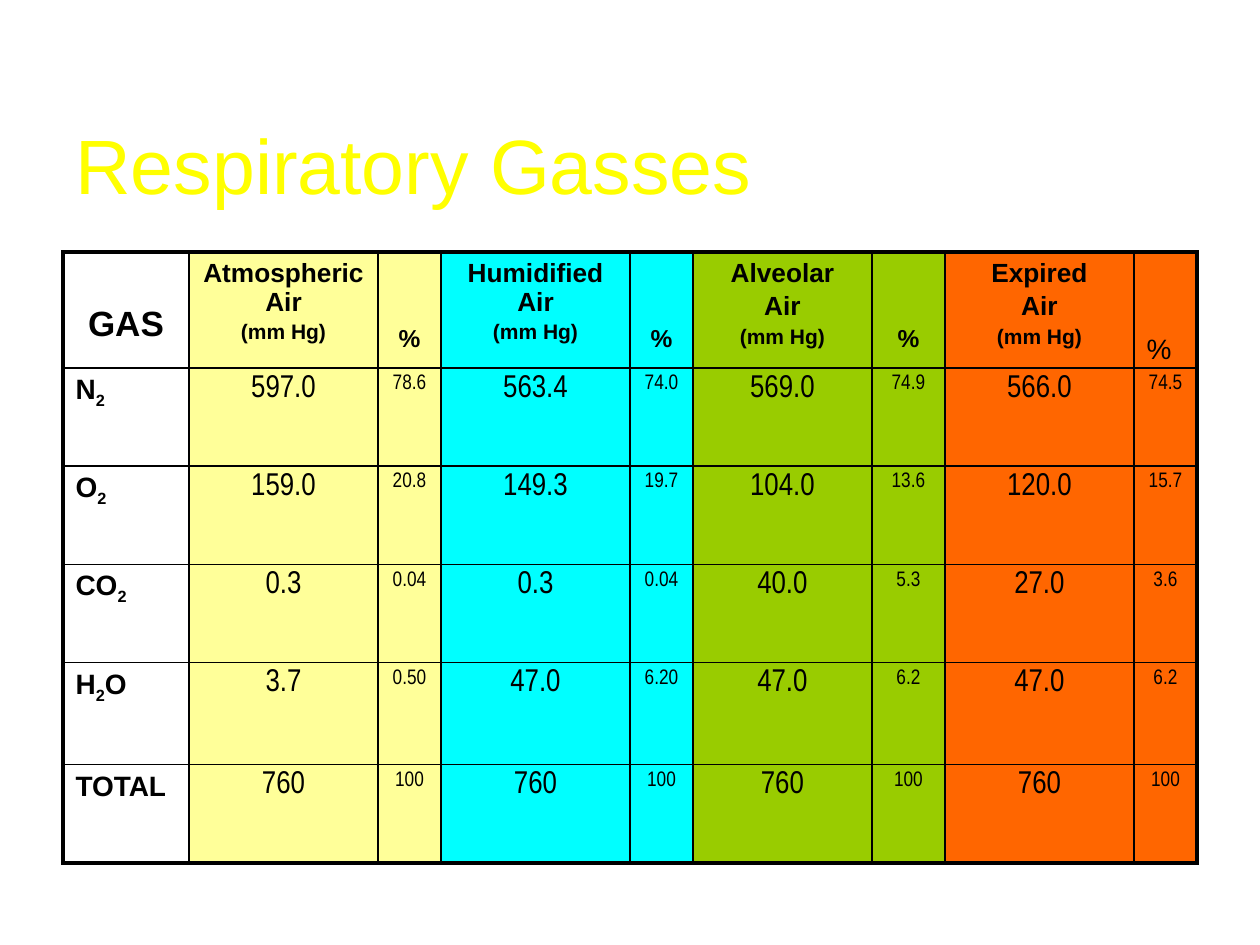
"""Build a slide with a table of respiratory gas pressures and percentages."""
from lxml import etree
from pptx import Presentation
from pptx.dml.color import RGBColor
from pptx.enum.text import MSO_ANCHOR, PP_ALIGN
from pptx.oxml import parse_xml
from pptx.oxml.ns import qn
from pptx.util import Inches, Pt

CENTER, LEFT, MIDDLE = PP_ALIGN.CENTER, PP_ALIGN.LEFT, MSO_ANCHOR.MIDDLE
BLACK = RGBColor(0x00, 0x00, 0x00)
WHITE = RGBColor(0xFF, 0xFF, 0xFF)
YELLOW = RGBColor(0xFF, 0xFF, 0x00)
CREAM = RGBColor(0xFF, 0xFF, 0x99)
CYAN = RGBColor(0x00, 0xFF, 0xFF)
GREEN = RGBColor(0x99, 0xCC, 0x00)
ORANGE = RGBColor(0xFF, 0x66, 0x00)
A_NS = "http://schemas.openxmlformats.org/drawingml/2006/main"

COL_WIDTHS = [1, 1.5, 0.5, 1.5, 0.5, 1.42, 0.58, 1.5, 0.5]
ROW_HEIGHTS = [0.92, 0.78, 0.78, 0.78, 0.81, 0.78]
COL_FILLS = [WHITE, CREAM, CREAM, CYAN, CYAN, GREEN, GREEN, ORANGE, ORANGE]
HEADERS = [
    ["GAS"],
    ["Atmospheric Air", "(mm Hg)"], ["%"],
    ["Humidified Air", "(mm Hg)"], ["%"],
    ["Alveolar", "Air", "(mm Hg)"], ["%"],
    ["Expired", "Air", "(mm Hg)"], ["%"],
]
GASES = [
    ["N2", "597.0", "78.6", "563.4", "74.0", "569.0", "74.9", "566.0", "74.5"],
    ["O2", "159.0", "20.8", "149.3", "19.7", "104.0", "13.6", "120.0", "15.7"],
    ["CO2", "0.3", "0.04", "0.3", "0.04", "40.0", "5.3", "27.0", "3.6"],
    ["H2O", "3.7", "0.50", "47.0", "6.20", "47.0", "6.2", "47.0", "6.2"],
    ["TOTAL", "760", "100", "760", "100", "760", "100", "760", "100"],
]
HEADER_SIZES = {"GAS": 20, "(mm Hg)": 12, "%": 14}
HEADER_TOPS = {"GAS": 0.42, "%": 0.58}


def style(p, size, name="Arial", bold=False, align=CENTER):
    p.alignment = align
    p.font.size = Pt(size)
    p.font.name = name
    p.font.bold = bold
    p.font.color.rgb = BLACK


def add_borders(cell, widths):
    tc_pr = cell._tc.get_or_add_tcPr()
    for i, (side, width) in enumerate(zip("LRTB", widths)):
        ln = parse_xml(
            f'<a:ln{side} xmlns:a="{A_NS}" w="{Pt(width)}"><a:solidFill>'
            f'<a:srgbClr val="{BLACK}"/></a:solidFill></a:ln{side}>')
        tc_pr.insert(i, ln)


prs = Presentation()
prs.slide_width, prs.slide_height = Inches(10), Inches(7.5)
s = prs.slides.add_slide(prs.slide_layouts[6])

title = s.shapes.add_textbox(Inches(0.5), Inches(0.67), Inches(9), Inches(1.25))
tf = title.text_frame
tf.word_wrap = True
tf.vertical_anchor = MIDDLE
r = tf.paragraphs[0].add_run()
r.text = "Respiratory Gasses"
r.font.size = Pt(44)
r.font.color.rgb = YELLOW
effects = etree.SubElement(r._r.get_or_add_rPr(), qn("a:effectLst"))
shadow = etree.SubElement(effects, qn("a:outerShdw"), dist=str(Inches(0.04)), dir="2700000")
etree.SubElement(shadow, qn("a:srgbClr"), val=str(BLACK))
r.font.name = "Arial"

rows, cols = len(ROW_HEIGHTS), len(COL_WIDTHS)
table = s.shapes.add_table(rows, cols, Inches(0.5), Inches(2), Inches(9),
                           Inches(sum(ROW_HEIGHTS))).table
table.first_row = table.horz_banding = False
for column, width in zip(table.columns, COL_WIDTHS):
    column.width = Inches(width)
for row, height in zip(table.rows, ROW_HEIGHTS):
    row.height = Inches(height)

for i in range(rows):
    for j, fill in enumerate(COL_FILLS):
        cell = table.cell(i, j)
        cell.fill.solid()
        cell.fill.fore_color.rgb = fill
        edges = [j == 0, j == cols - 1, i == 0, i == rows - 1]
        add_borders(cell, [2.25 if edge else 1 for edge in edges])

for j, lines in enumerate(HEADERS):
    cell = table.cell(0, j)
    cell.margin_top = Inches(HEADER_TOPS.get(lines[0], 0.05))
    cell.margin_bottom = 0
    cell.text_frame.text = "\n".join(lines)
    for k, p in enumerate(cell.text_frame.paragraphs):
        style(p, HEADER_SIZES.get(lines[k], 15), bold=True)
        if k:
            p.space_before = Pt(2.4)
last = table.cell(0, cols - 1)
last.margin_top = Inches(0.65)
style(last.text_frame.paragraphs[0], 16, align=LEFT)

for i, (gas, *values) in enumerate(GASES, 1):
    p = table.cell(i, 0).text_frame.paragraphs[0]
    style(p, 16, bold=True, align=LEFT)
    for part in gas.replace("2", " 2 ").split():
        r = p.add_run()
        r.text = part
        if part == "2":
            r._r.get_or_add_rPr().set("baseline", "-25000")
    for j, value in enumerate(values, 1):
        p = table.cell(i, j).text_frame.paragraphs[0]
        p.text = value
        style(p, 18 if j % 2 else 12, "Arial Narrow")

prs.save("out.pptx")
